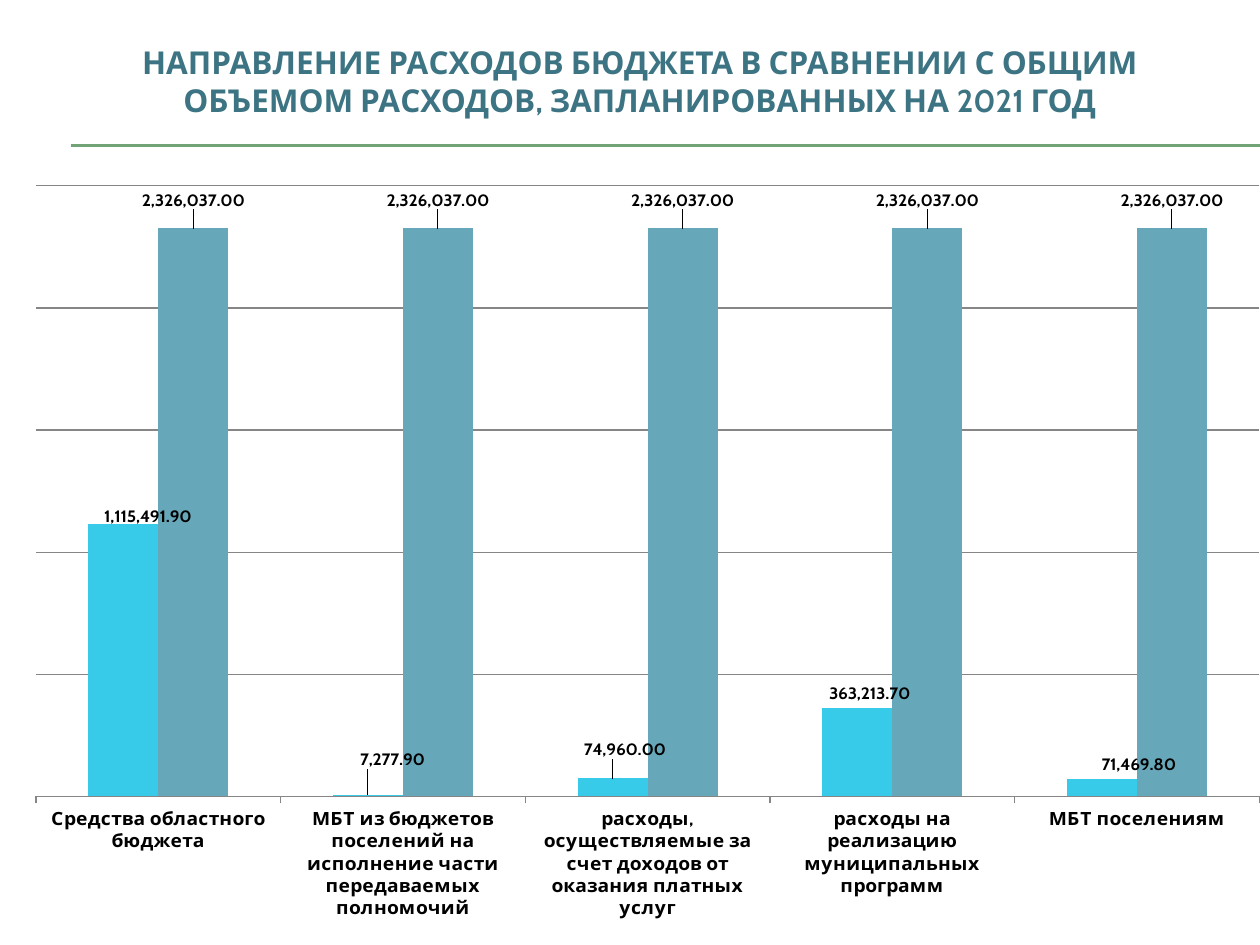
from lxml import etree
from pptx import Presentation
from pptx.chart.data import CategoryChartData
from pptx.dml.color import RGBColor
from pptx.enum.chart import (XL_CHART_TYPE, XL_LABEL_POSITION,
                             XL_TICK_LABEL_POSITION, XL_TICK_MARK)
from pptx.enum.shapes import MSO_CONNECTOR
from pptx.enum.text import MSO_ANCHOR, PP_ALIGN
from pptx.oxml import parse_xml
from pptx.oxml.ns import nsdecls, qn
from pptx.util import Inches, Pt

CLUSTER = XL_CHART_TYPE.COLUMN_CLUSTERED
OUT_END = XL_LABEL_POSITION.OUTSIDE_END
LOW = XL_TICK_LABEL_POSITION.LOW
TICK_OUT, TICK_NONE = XL_TICK_MARK.OUTSIDE, XL_TICK_MARK.NONE
STRAIGHT = MSO_CONNECTOR.STRAIGHT
MIDDLE, CENTER = MSO_ANCHOR.MIDDLE, PP_ALIGN.CENTER

FONT = "Cabin"
MONEY = "#,##0.00"
TITLE = ("НАПРАВЛЕНИЕ РАСХОДОВ БЮДЖЕТА В СРАВНЕНИИ С ОБЩИМ "
         "ОБЪЕМОМ РАСХОДОВ, ЗАПЛАНИРОВАННЫХ НА 2021 ГОД")
CATS = ["Средства областного бюджета",
        "МБТ из бюджетов поселений на исполнение части передаваемых полномочий",
        "расходы, осуществляемые за счет доходов от оказания платных услуг",
        "расходы на реализацию муниципальных программ",
        "МБТ поселениям"]
# Name, colour, values and label shifts (shares of the chart's size)
SERIES = [
    ("Series 1", "37CBE9", [1115491.9, 7277.9, 74960, 363213.7, 71469.8],
     [(0.02, 0.01), (0.02, -0.03), (0.01, -0.02), (0.01, 0), (0.03, 0)]),
    ("Series 2", "66A7B9", [2326037] * len(CATS),
     [(0, -0.02)] * len(CATS)),
]


def color(code):
    return RGBColor.from_string(code)


def style(font, size, code="000000", bold=True):
    font.name, font.size, font.bold = FONT, Pt(size), bold
    font.color.rgb = color(code)


def stroke(line, code, width=0.75):
    line.color.rgb = color(code)
    line.width = Pt(width)


def layout(x, y, w=None, h=None):
    """Manual layout: a shift for a label, or an inner box for the plot."""
    parts = [("x", x), ("y", y)]
    if w is not None:
        parts = ([("layoutTarget", "inner"), ("xMode", "edge"),
                  ("yMode", "edge")] + parts + [("w", w), ("h", h)])
    body = "".join(f'<c:{tag} val="{val}"/>' for tag, val in parts)
    return parse_xml(f'<c:layout {nsdecls("c")}><c:manualLayout>{body}'
                     '</c:manualLayout></c:layout>')


def add_title(slide, box):
    title = slide.shapes.title
    title.left, title.top, title.width, title.height = map(Inches, box)
    frame = title.text_frame
    frame.text = TITLE
    frame.word_wrap = True
    frame.vertical_anchor = MIDDLE
    para = frame.paragraphs[0]
    para.alignment = CENTER
    style(para.runs[0].font, 18, "3C7483")


def add_rule(slide, left, right, top):
    # Two hairlines that read as one
    for y in (top, top + 0.01):
        line = slide.shapes.add_connector(
            STRAIGHT, *map(Inches, (left, y, right, y)))
        stroke(line.line, "72A376")
        etree.SubElement(line._element.spPr, qn("a:effectLst"))


def add_labels(series, shifts):
    labels = series.data_labels
    labels.show_value = True
    labels.number_format, labels.number_format_is_linked = MONEY, False
    labels.position = OUT_END
    style(labels.font, 10)
    for i, shift in enumerate(shifts):
        label = series.points[i].data_label
        label.position = OUT_END
        style(label.font, 10)
    # Shift and number format of each label
    for node, shift in zip(series._element.iter(qn("c:dLbl")), shifts):
        node.insert(1, layout(*shift))
        node.insert(2, parse_xml(f'<c:numFmt {nsdecls("c")} '
                                 f'formatCode="{MONEY}" sourceLinked="0"/>'))


def add_bars(slide, box):
    data = CategoryChartData()
    data.categories = CATS
    for name, _, vals, _ in SERIES:
        data.add_series(name, vals)
    chart = slide.shapes.add_chart(CLUSTER, *map(Inches, box), data).chart
    chart.has_legend = chart.has_title = False
    style(chart.font, 18, bold=False)

    # Axes
    cat, val = chart.category_axis, chart.value_axis
    cat.major_tick_mark = TICK_OUT
    cat.tick_label_position = LOW
    style(cat.tick_labels.font, 11)
    stroke(cat.format.line, "868686")
    val.minimum_scale, val.maximum_scale, val.major_unit = 0, 2500000, 500000
    val.major_tick_mark = TICK_NONE
    val.has_major_gridlines = True
    stroke(val.major_gridlines.format.line, "868686")
    val.visible = False

    # Columns
    plot = chart.plots[0]
    plot.gap_width, plot.overlap = 150, 0
    plot.vary_by_categories = False
    for series, (_, code, _, shifts) in zip(plot.series, SERIES):
        series.format.fill.solid()
        series.format.fill.fore_color.rgb = color(code)
        series.invert_if_negative = False
        add_labels(series, shifts)

    # Plot box
    area = chart._chartSpace.chart.plotArea
    for old in area.findall(qn("c:layout")):
        area.remove(old)
    area.insert(0, layout(0, 0, 1, 0.88))


def main():
    deck = Presentation()
    deck.slide_width, deck.slide_height = Inches(10), Inches(7.5)
    slide = deck.slides.add_slide(deck.slide_layouts[5])
    add_rule(slide, 0.56, 10, 1.15)
    add_title(slide, (0.33, 0.21, 9.5, 0.87))
    add_bars(slide, (0.28, 1.47, 9.72, 5.83))
    deck.save("out.pptx")


if __name__ == "__main__":
    main()
